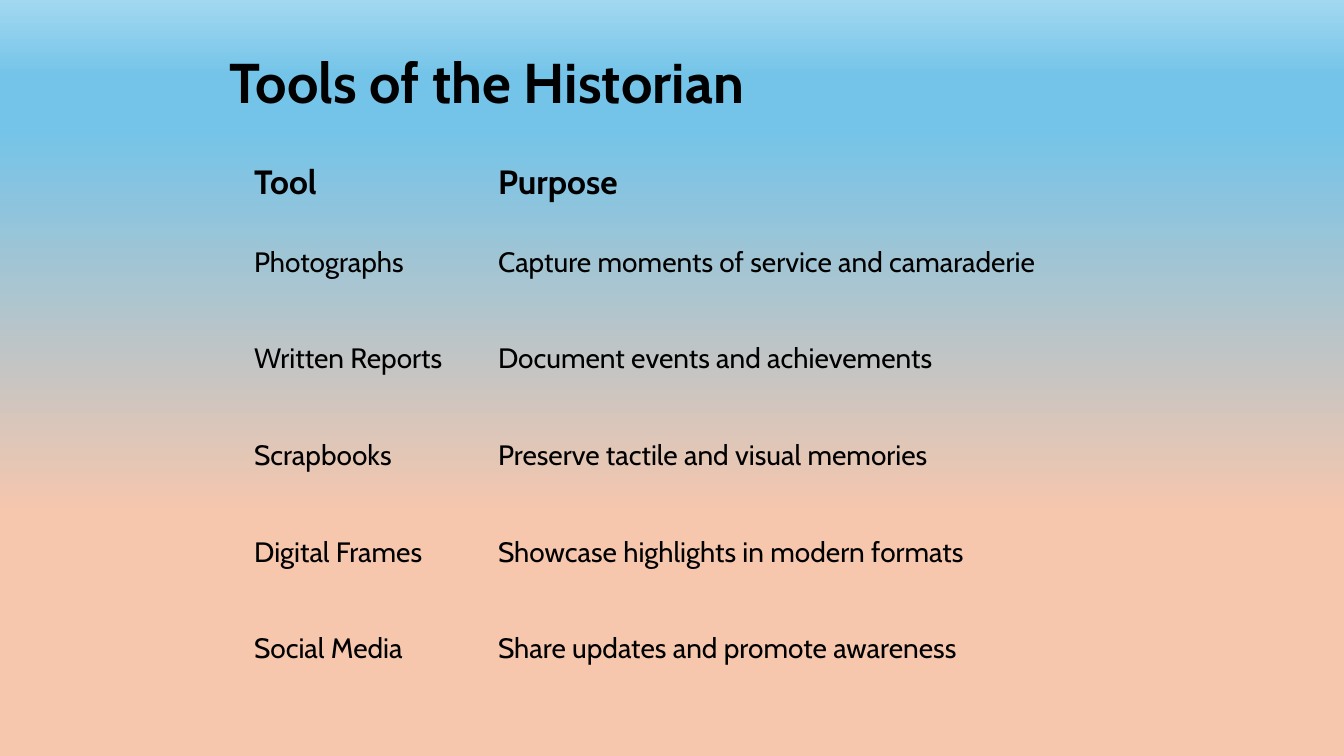
from lxml.etree import SubElement
from pptx import Presentation
from pptx.dml.color import RGBColor
from pptx.enum.text import MSO_ANCHOR, MSO_AUTO_SIZE, PP_ALIGN
from pptx.oxml.ns import qn
from pptx.util import Emu, Pt

EMU_PER_PX = 914400 / 100.8
FONT = "Cabin"
BLACK = RGBColor(0x00, 0x00, 0x00)
PEACH = RGBColor(0xF6, 0xC6, 0xAD)
SKY = RGBColor(0x74, 0xC4, 0xE9)
PALE_SKY = RGBColor(0xA2, 0xD8, 0xF0)
SKY_STOPS = [(32, PEACH), (83, SKY), (90, SKY), (100, PALE_SKY)]
NO_GRID_STYLE = "{2D5ABB26-0587-4C30-8999-92F81FD0307C}"
COLUMN_WIDTHS = [244, 730]
TABLE_HEIGHT = 546
HEADER_HEIGHT = 63
TOOLS = [
    ("Tool", "Purpose"),
    ("Photographs", "Capture moments of service and camaraderie"),
    ("Written Reports", "Document events and achievements"),
    ("Scrapbooks", "Preserve tactile and visual memories"),
    ("Digital Frames", "Showcase highlights in modern formats"),
    ("Social Media", "Share updates and promote awareness"),
]


def px(length):
    """Turn a length in px into EMU."""
    return Emu(round(length * EMU_PER_PX))


def write_text(text_frame, text, size, bold=False):
    """Put one left-aligned, formatted line into a text frame."""
    text_frame.text = text
    text_frame.vertical_anchor = MSO_ANCHOR.MIDDLE
    paragraph = text_frame.paragraphs[0]
    paragraph.alignment = PP_ALIGN.LEFT
    font = paragraph.runs[0].font
    font.name = FONT
    font.size = Pt(size)
    font.bold = bold
    font.color.rgb = BLACK


def paint_background(slide, stops):
    """Fill the slide background with a gradient rising from the bottom."""
    fill = slide.background.fill
    fill.gradient()
    fill.gradient_angle = 90
    stop_list = slide.background._cSld.find(".//" + qn("a:gsLst"))
    for old_stop in list(stop_list):
        stop_list.remove(old_stop)
    for percent, color in stops:
        stop = SubElement(stop_list, qn("a:gs"), pos=str(percent * 1000))
        SubElement(stop, qn("a:srgbClr"), val=str(color))


def place_title(slide, text, left, top, width, height):
    """Move the title placeholder and write the heading in it."""
    title = slide.shapes.title
    title.left, title.top = px(left), px(top)
    title.width, title.height = px(width), px(height)
    write_text(title.text_frame, text, size=40, bold=True)
    title.text_frame.word_wrap = True
    title.text_frame.auto_size = MSO_AUTO_SIZE.SHAPE_TO_FIT_TEXT


def add_tools_table(slide, rows, left, top):
    """Add the unfilled, borderless table of tools and purposes."""
    frame = slide.shapes.add_table(
        len(rows), len(COLUMN_WIDTHS),
        px(left), px(top), px(sum(COLUMN_WIDTHS)), px(TABLE_HEIGHT),
    )
    table = frame.table
    table.horz_banding = False
    table._tbl.tblPr.find(qn("a:tableStyleId")).text = NO_GRID_STYLE
    for column, width in zip(table.columns, COLUMN_WIDTHS):
        column.width = px(width)
    body_height = (TABLE_HEIGHT - HEADER_HEIGHT) / (len(rows) - 1)
    for index, (row, texts) in enumerate(zip(table.rows, rows)):
        is_header = index == 0
        row.height = px(HEADER_HEIGHT if is_header else body_height)
        for cell, text in zip(row.cells, texts):
            cell.fill.background()
            cell.vertical_anchor = MSO_ANCHOR.MIDDLE
            write_text(cell.text_frame, text, size=24 if is_header else 20, bold=is_header)


def main():
    """Build the slide and save it."""
    presentation = Presentation()
    presentation.slide_width = px(1344)
    presentation.slide_height = px(756)
    slide = presentation.slides.add_slide(presentation.slide_layouts[5])
    paint_background(slide, SKY_STOPS)
    place_title(slide, "Tools of the Historian", left=219, top=42, width=672, height=78)
    add_tools_table(slide, TOOLS, left=244, top=151)
    presentation.save("out.pptx")


if __name__ == "__main__":
    main()
